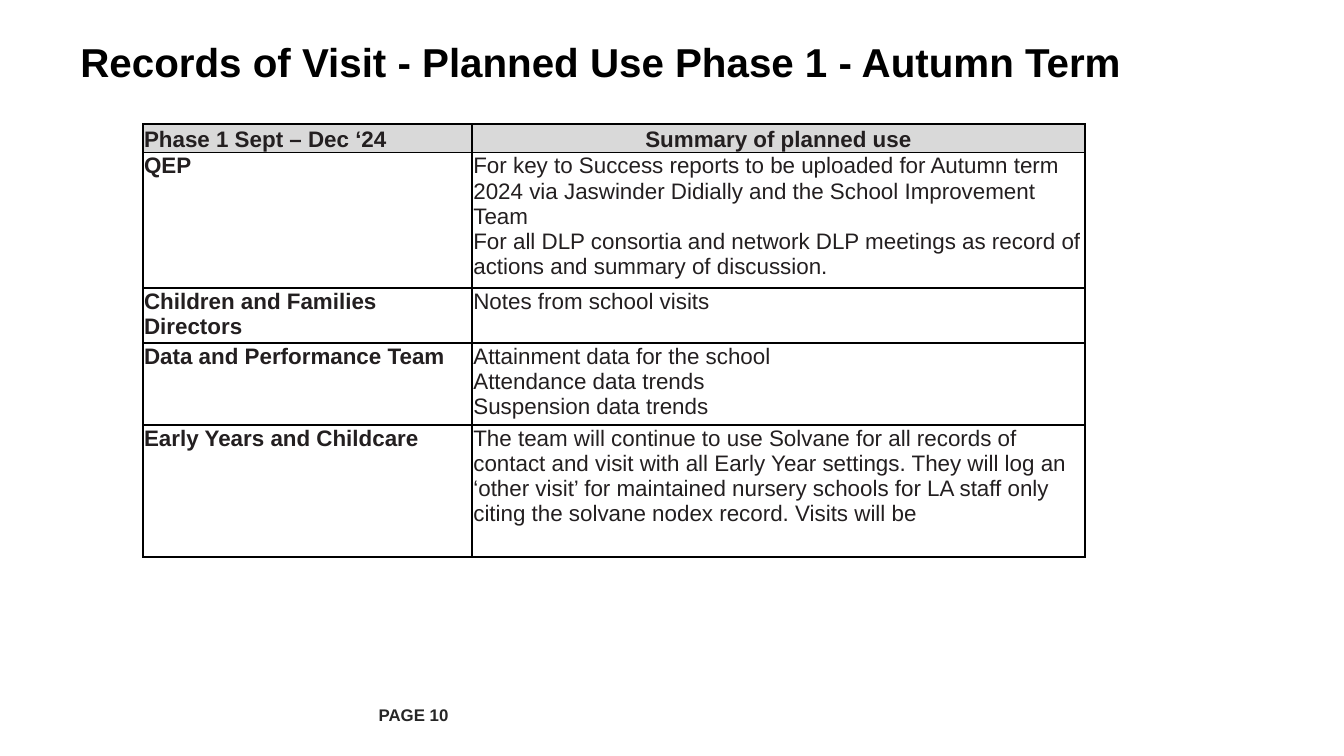
from dataclasses import dataclass

from lxml.etree import SubElement
from pptx import Presentation
from pptx.dml.color import RGBColor
from pptx.enum.text import MSO_ANCHOR, PP_ALIGN
from pptx.oxml.ns import qn
from pptx.slide import Slide
from pptx.table import _Cell
from pptx.text.text import _Paragraph
from pptx.util import Pt

FONT = "Arial"
BLACK = RGBColor(0x00, 0x00, 0x00)
FOOTER_GREY = RGBColor(0x26, 0x26, 0x26)
TABLE_TEXT = RGBColor(0x23, 0x1F, 0x20)
HEADER_FILL = RGBColor(0xD9, 0xD9, 0xD9)

TABLE_LEFT = 76.5
TABLE_TOP = 66.5
COLUMN_WIDTHS = (176.4, 328.3)


@dataclass(frozen=True)
class Label:
    text: str
    left: float
    top: float
    width: float
    height: float
    size: float
    color: RGBColor


@dataclass(frozen=True)
class TeamRow:
    team: str
    uses: tuple[str, ...]
    height: float


LABELS = (
    Label("PAGE 10", 195.8, 372.2, 62.6, 21.6, 9, FOOTER_GREY),
    Label("Records of Visit - Planned Use Phase 1 - Autumn Term", 36, 16.6, 648, 33.1, 21.6, BLACK),
)

HEADER = TeamRow("Phase 1 Sept – Dec ‘24", ("Summary of planned use",), 14.4)

TEAM_ROWS = (
    TeamRow(
        "QEP",
        (
            "For key to Success reports to be uploaded for Autumn term 2024 via "
            "Jaswinder Didially and the School Improvement Team",
            "For all DLP consortia and network DLP meetings as record of actions "
            "and summary of discussion.",
        ),
        70.6,
    ),
    TeamRow("Children and Families Directors", ("Notes from school visits",), 28.5),
    TeamRow(
        "Data and Performance Team",
        (
            "Attainment data for the school",
            "Attendance data trends",
            "Suspension data trends",
        ),
        42.5,
    ),
    TeamRow(
        "Early Years and Childcare",
        (
            "The team will continue to use Solvane for all records of contact and "
            "visit with all Early Year settings. They will log an ‘other visit’ for "
            "maintained nursery schools for LA staff only citing the solvane nodex "
            "record. Visits will be",
        ),
        70.6,
    ),
)


def add_run(paragraph: _Paragraph, text: str, size: float, color: RGBColor, bold: bool) -> None:
    run = paragraph.add_run()
    run.text = text
    run.font.name = FONT
    run.font.size = Pt(size)
    run.font.bold = bold
    run.font.color.rgb = color


def add_label(slide: Slide, label: Label) -> None:
    shape = slide.shapes.add_textbox(
        Pt(label.left), Pt(label.top), Pt(label.width), Pt(label.height)
    )
    frame = shape.text_frame
    frame.word_wrap = True
    frame.vertical_anchor = MSO_ANCHOR.MIDDLE
    add_run(frame.paragraphs[0], label.text, label.size, label.color, True)


def add_borders(cell: _Cell) -> None:
    properties = cell._tc.get_or_add_tcPr()
    for side in ("lnL", "lnR", "lnT", "lnB"):
        line = SubElement(properties, qn(f"a:{side}"), w=str(Pt(1)))
        fill = SubElement(line, qn("a:solidFill"))
        SubElement(fill, qn("a:srgbClr"), val=str(BLACK))


def fill_cell(cell: _Cell, texts: tuple[str, ...], bold: bool, header: bool) -> None:
    cell.margin_left = cell.margin_right = cell.margin_top = Pt(0.7)
    cell.margin_bottom = Pt(0)
    cell.vertical_anchor = MSO_ANCHOR.BOTTOM if header else MSO_ANCHOR.TOP
    add_borders(cell)
    if header:
        cell.fill.solid()
        cell.fill.fore_color.rgb = HEADER_FILL
    else:
        cell.fill.background()
    frame = cell.text_frame
    for index, text in enumerate(texts):
        paragraph = frame.add_paragraph() if index else frame.paragraphs[0]
        add_run(paragraph, text, 12, TABLE_TEXT, bold)


def add_use_table(slide: Slide, rows: tuple[TeamRow, ...]) -> None:
    table = slide.shapes.add_table(
        len(rows),
        len(COLUMN_WIDTHS),
        Pt(TABLE_LEFT),
        Pt(TABLE_TOP),
        Pt(sum(COLUMN_WIDTHS)),
        Pt(sum(row.height for row in rows)),
    ).table
    table.horz_banding = False
    for column, width in zip(table.columns, COLUMN_WIDTHS):
        column.width = Pt(width)
    for index, row in enumerate(rows):
        header = index == 0
        table.rows[index].height = Pt(row.height)
        fill_cell(table.cell(index, 0), (row.team,), True, header)
        fill_cell(table.cell(index, 1), row.uses, header, header)
    table.cell(0, 1).text_frame.paragraphs[0].alignment = PP_ALIGN.CENTER


def main() -> None:
    presentation = Presentation()
    presentation.slide_width = Pt(720)
    presentation.slide_height = Pt(405)
    slide = presentation.slides.add_slide(presentation.slide_layouts[6])
    for label in LABELS:
        add_label(slide, label)
    add_use_table(slide, (HEADER, *TEAM_ROWS))
    presentation.save("out.pptx")


if __name__ == "__main__":
    main()
